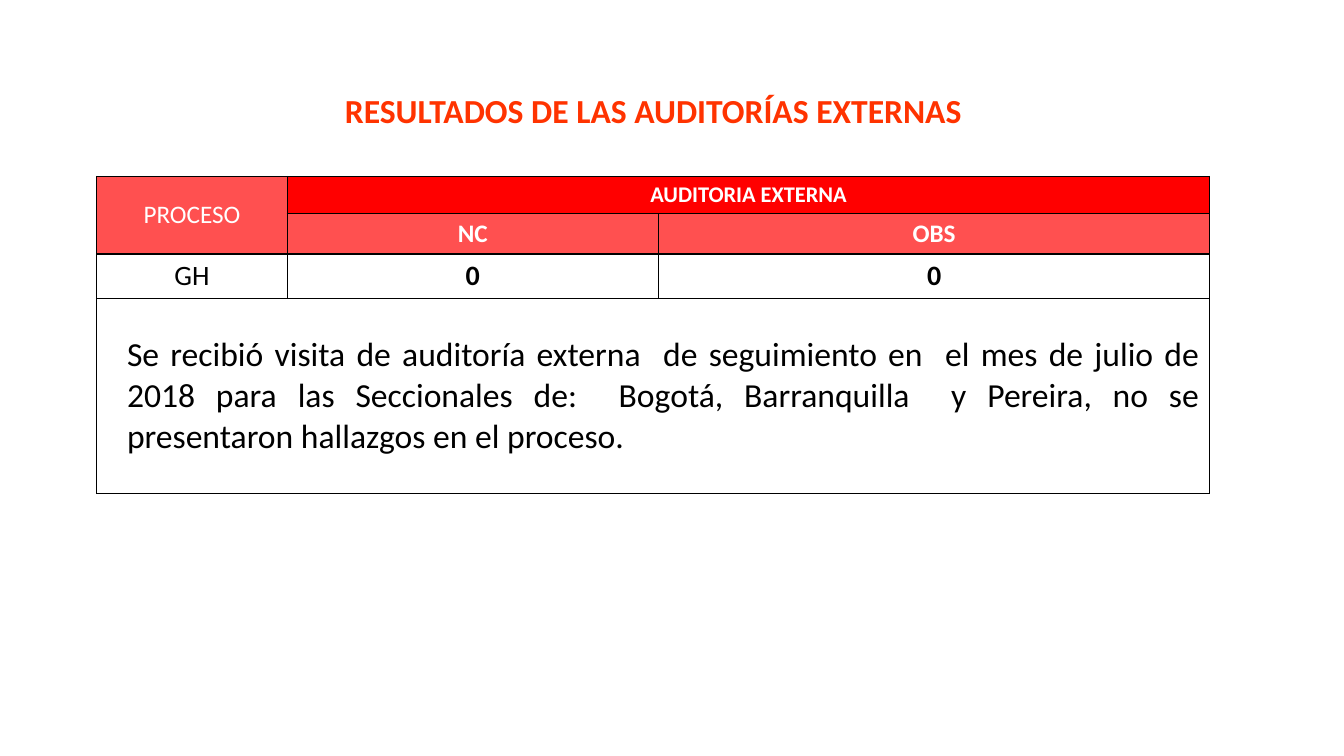
import pptx
import pptx.util
import pptx.dml.color
import pptx.enum.text
import pptx.oxml.ns
import lxml.etree

EMU_PER_PX = 9144
FONT = "Calibri"
BLACK = pptx.dml.color.RGBColor(0x00, 0x00, 0x00)
WHITE = pptx.dml.color.RGBColor(0xFF, 0xFF, 0xFF)
RED = pptx.dml.color.RGBColor(0xFF, 0x00, 0x00)
CORAL = pptx.dml.color.RGBColor(0xFF, 0x50, 0x50)
ORANGE = pptx.dml.color.RGBColor(0xFF, 0x33, 0x00)
CENTER = pptx.enum.text.PP_ALIGN.CENTER
JUSTIFY = pptx.enum.text.PP_ALIGN.JUSTIFY

COLUMN_WIDTHS = [189, 368, 547]
ROW_HEIGHTS = [37, 40, 44, 194]
FINDINGS = (
    "Se recibió visita de auditoría externa  de seguimiento en  el mes de julio de 2018 "
    "para las Seccionales de:  Bogotá, Barranquilla  y Pereira, no se presentaron "
    "hallazgos en el proceso."
)
MERGES = [((0, 0), (1, 0)), ((0, 1), (0, 2)), ((3, 0), (3, 2))]
CELLS = [
    (0, 0, "PROCESO", 18, False, WHITE, CORAL),
    (0, 1, "AUDITORIA EXTERNA", 16, True, WHITE, RED),
    (1, 1, "NC", 18, True, WHITE, CORAL),
    (1, 2, "OBS", 18, True, WHITE, CORAL),
    (2, 0, "GH", 20, False, BLACK, None),
    (2, 1, "0", 20, True, BLACK, None),
    (2, 2, "0", 20, True, BLACK, None),
    (3, 0, FINDINGS, 24, False, BLACK, None),
]


def px(length):
    return pptx.util.Emu(length * EMU_PER_PX)


def format_paragraph(paragraph, size, bold, color, alignment=CENTER):
    paragraph.alignment = alignment
    paragraph.font.name = FONT
    paragraph.font.size = pptx.util.Pt(size)
    paragraph.font.bold = bold
    paragraph.font.color.rgb = color


def add_title(slide, text, left, top, width, height):
    title = slide.shapes.title
    title.left, title.top = px(left), px(top)
    title.width, title.height = px(width), px(height)
    title.text_frame.text = text
    title.text_frame.word_wrap = True
    title.text_frame.auto_size = pptx.enum.text.MSO_AUTO_SIZE.SHAPE_TO_FIT_TEXT
    title.text_frame.vertical_anchor = pptx.enum.text.MSO_ANCHOR.TOP
    format_paragraph(title.text_frame.paragraphs[0], 24, True, ORANGE)


def add_borders(cell):
    properties = cell._tc.get_or_add_tcPr()
    qn = pptx.oxml.ns.qn
    for side in ("a:lnL", "a:lnR", "a:lnT", "a:lnB"):
        line = lxml.etree.SubElement(properties, qn(side), w=str(pptx.util.Pt(1)))
        fill = lxml.etree.SubElement(line, qn("a:solidFill"))
        lxml.etree.SubElement(fill, qn("a:srgbClr"), val=str(BLACK))


def fill_cell(cell, text, size, bold, color, background):
    cell.text = text
    cell.vertical_anchor = pptx.enum.text.MSO_ANCHOR.MIDDLE
    if background is not None:
        cell.fill.solid()
        cell.fill.fore_color.rgb = background
    alignment = JUSTIFY if text == FINDINGS else CENTER
    paragraph = cell.text_frame.paragraphs[0]
    format_paragraph(paragraph, size, bold, color, alignment)
    if alignment == JUSTIFY:
        paragraph._p.get_or_add_pPr().set("marL", str(px(20)))


def add_audit_table(slide, left, top):
    table = slide.shapes.add_table(
        len(ROW_HEIGHTS), len(COLUMN_WIDTHS), px(left), px(top),
        px(sum(COLUMN_WIDTHS)), px(sum(ROW_HEIGHTS)),
    ).table
    table.first_row = False
    table.horz_banding = False
    for column, width in zip(table.columns, COLUMN_WIDTHS):
        column.width = px(width)
    for row, height in zip(table.rows, ROW_HEIGHTS):
        row.height = px(height)
    for cell in table.iter_cells():
        add_borders(cell)
        cell.fill.background()
    for first, last in MERGES:
        table.cell(*first).merge(table.cell(*last))
    for row, column, *content in CELLS:
        fill_cell(table.cell(row, column), *content)


def main():
    presentation = pptx.Presentation()
    presentation.slide_width = px(1333)
    presentation.slide_height = px(750)
    slide = presentation.slides.add_slide(presentation.slide_layouts[5])
    add_audit_table(slide, 96, 175)
    add_title(slide, "RESULTADOS DE LAS AUDITORÍAS EXTERNAS", 184, 84, 928, 50)
    presentation.save("out.pptx")


if __name__ == "__main__":
    main()
